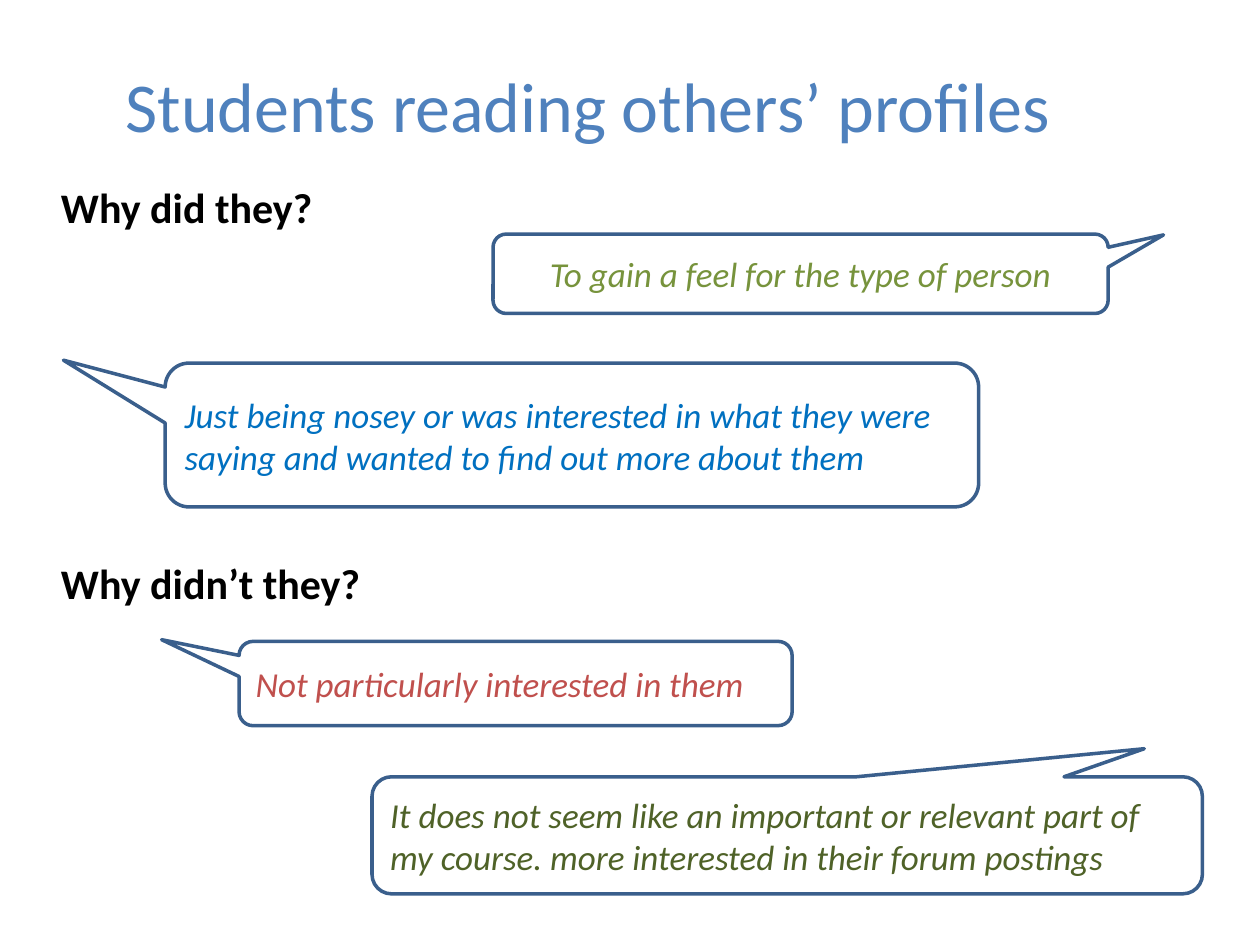
from typing import NamedTuple

from pptx import Presentation
from pptx import util as u
from pptx.dml.color import RGBColor
from pptx.enum import shapes, text

FONT = "Calibri"
COLORS = {
    "title": "4F81BD",
    "heading": "000000",
    "outline": "3A5F8C",
    "blue": "0070C0",
    "dark green": "4F6228",
    "green": "77933C",
    "red": "C0504D",
}
LEFT, CENTER = text.PP_ALIGN.LEFT, text.PP_ALIGN.CENTER


class Area(NamedTuple):
    """Left, top, width and height in centimetres."""
    left: float
    top: float
    width: float
    height: float

    def lengths(self) -> list:
        return [u.Cm(value) for value in self]


class Quote(NamedTuple):
    words: str
    color: str
    area: Area
    tail: tuple  # tip offset from the centre, as shares of width and height
    align: text.PP_ALIGN = LEFT


QUOTES = [
    Quote("Just being nosey or was interested in what they were saying "
          "and wanted to find out more about them",
          "blue", Area(3.33, 7.32, 16.4, 2.9), (-5 / 8, -0.52)),
    Quote("It does not seem like an important or relevant part of my course. "
          "more interested in their forum postings",
          "dark green", Area(7.5, 15.66, 16.74, 2.36), (0.43, -0.74)),
    Quote("To gain a feel for the type of person",
          "green", Area(9.94, 4.72, 12.4, 1.6), (0.59, -0.49), CENTER),
    Quote("Not particularly interested in them",
          "red", Area(4.82, 12.93, 11.15, 1.7), (-0.64, -0.52)),
]


def rgb(name: str) -> RGBColor:
    return RGBColor.from_string(COLORS[name])


def write(para, words: str, *, size: int, color: str, bold: bool = False,
          italic: bool = False, align: text.PP_ALIGN = LEFT,
          before: int = 0) -> None:
    para.alignment = align
    para.space_before = u.Pt(before)
    span = para.add_run()
    span.text = words
    font = span.font
    font.name, font.size = FONT, u.Pt(size)
    font.bold, font.italic = bold, italic
    font.color.rgb = rgb(color)


def add_text_frame(page, area: Area, anchor: text.MSO_ANCHOR):
    frame = page.shapes.add_textbox(*area.lengths()).text_frame
    frame.word_wrap = True
    frame.vertical_anchor = anchor
    return frame


def add_quote(page, quote: Quote) -> None:
    box = page.shapes.add_shape(
        shapes.MSO_SHAPE.ROUNDED_RECTANGULAR_CALLOUT, *quote.area.lengths())
    box.adjustments[0], box.adjustments[1] = quote.tail
    box.shadow.inherit = False
    box.fill.background()
    box.line.color.rgb = rgb("outline")
    box.line.width = u.Pt(2)
    frame = box.text_frame
    frame.word_wrap = True
    frame.vertical_anchor = text.MSO_ANCHOR.MIDDLE
    write(frame.paragraphs[0], quote.words, size=20, color=quote.color,
          italic=True, align=quote.align)


def main() -> None:
    deck = Presentation()
    deck.slide_width, deck.slide_height = u.Cm(25.4), u.Cm(19.05)
    page = deck.slides.add_slide(deck.slide_layouts[6])

    # Title
    title = add_text_frame(page, Area(0, 0.51, 23.7, 3.18), text.MSO_ANCHOR.MIDDLE)
    write(title.paragraphs[0], "Students reading others’ profiles",
          size=40, color="title", align=CENTER)

    # The two questions, spaced to leave room for the quotes
    questions = add_text_frame(page, Area(0.98, 3.53, 21.46, 13.41), text.MSO_ANCHOR.TOP)
    write(questions.paragraphs[0], "Why did they?",
          size=24, color="heading", bold=True)
    write(questions.add_paragraph(), "Why didn’t they?",
          size=24, color="heading", bold=True, before=186)

    # Student quotes
    for quote in QUOTES:
        add_quote(page, quote)

    deck.save("out.pptx")


if __name__ == "__main__":
    main()
